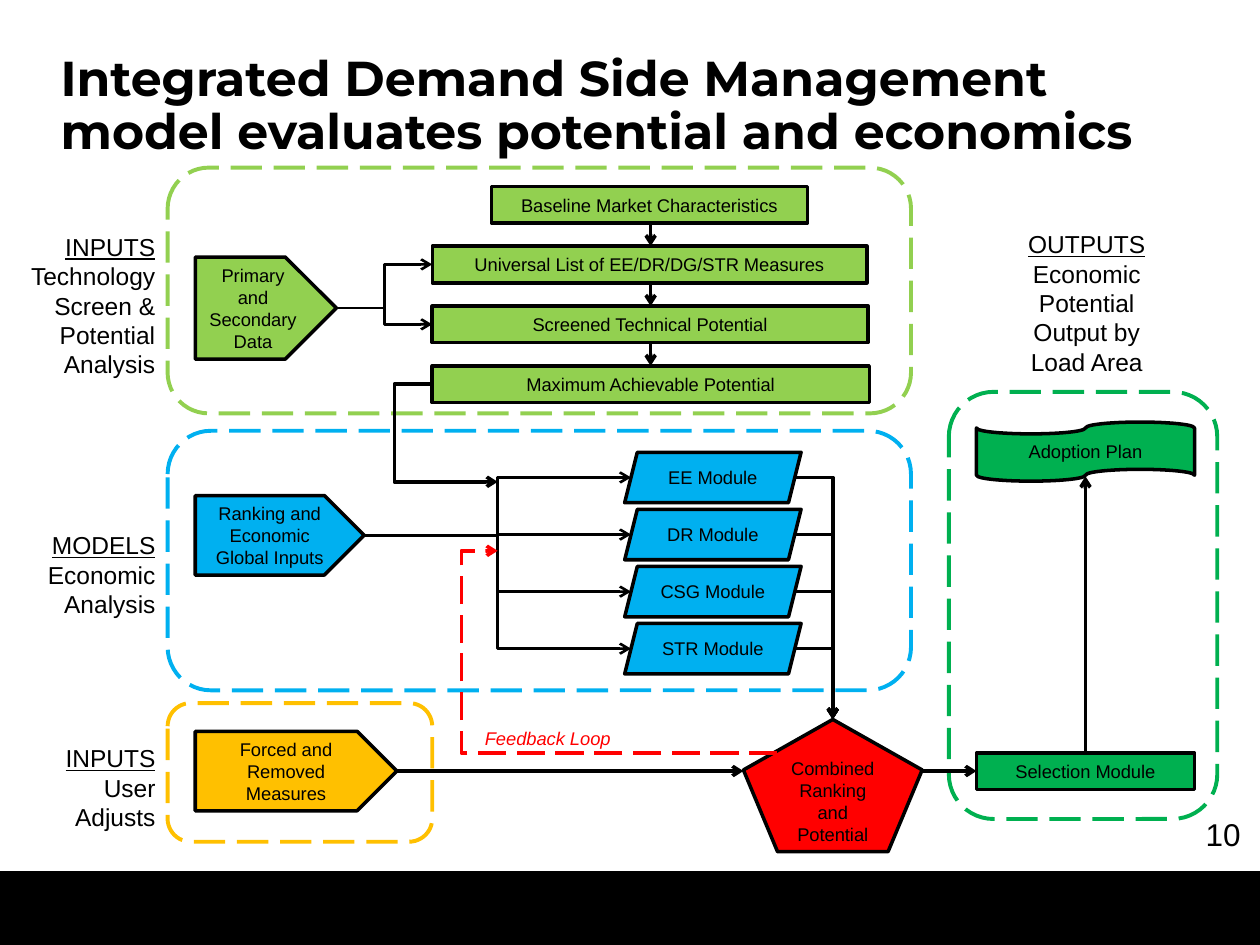
from dataclasses import dataclass
from typing import Optional

from lxml.etree import SubElement
from pptx import Presentation
from pptx.dml.color import RGBColor as RGB
from pptx.enum.dml import MSO_LINE as Dash
from pptx.enum.shapes import MSO_CONNECTOR as Conn, MSO_SHAPE as Geo
from pptx.enum.text import MSO_ANCHOR as Anchor, PP_ALIGN as Align
from pptx.oxml.ns import qn
from pptx.util import Pt


@dataclass(frozen=True)
class Theme:
    black: RGB = RGB(0, 0, 0)
    lime: RGB = RGB(0x92, 0xD0, 0x50)
    blue: RGB = RGB(0, 0xB0, 0xF0)
    green: RGB = RGB(0, 0xB0, 0x50)
    amber: RGB = RGB(0xFF, 0xC0, 0)
    red: RGB = RGB(0xFF, 0, 0)
    font: str = "Arial"
    title_font: str = "Montserrat"
    title: float = 28
    page: float = 18
    label: float = 14
    node: float = 10.5


T = Theme()


@dataclass
class Node:
    text: str
    geo: Geo
    fill: RGB
    x: float
    y: float
    w: float
    h: float

    @property
    def left(self):
        return self.x, self.y + self.h / 2

    @property
    def right(self):
        return self.x + self.w, self.y + self.h / 2

    @property
    def top(self):
        return self.x + self.w / 2, self.y

    @property
    def bottom(self):
        return self.x + self.w / 2, self.y + self.h


@dataclass
class Frame:
    color: RGB
    x: float
    y: float
    w: float
    h: float


@dataclass
class Label:
    head: str
    body: str
    align: Align
    x: float
    y: float
    w: float
    h: float


@dataclass
class Link:
    start: tuple
    end: tuple
    geom: str = "straightConnector1"
    width: float = 2
    color: RGB = T.black
    adj: Optional[float] = None
    dash: Optional[Dash] = None


def add_run(p, text: str, size: float, color: RGB = T.black, font: str = T.font):
    r = p.add_run()
    r.text = text
    r.font.size, r.font.name = Pt(size), font
    r.font.color.rgb = color
    return r


def add_box(slide, x: float, y: float, w: float, h: float):
    tf = slide.shapes.add_textbox(Pt(x), Pt(y), Pt(w), Pt(h)).text_frame
    tf.word_wrap = True
    return tf


def draw_node(slide, n: Node) -> None:
    s = slide.shapes.add_shape(n.geo, Pt(n.x), Pt(n.y), Pt(n.w), Pt(n.h))
    s.shadow.inherit = False
    s.fill.solid()
    s.fill.fore_color.rgb = n.fill
    s.line.color.rgb = T.black
    s.line.width = Pt(2)
    tf = s.text_frame
    tf.word_wrap = True
    tf.vertical_anchor = Anchor.MIDDLE
    p = tf.paragraphs[0]
    p.alignment = Align.CENTER
    add_run(p, n.text, T.node)


def draw_frame(slide, f: Frame) -> None:
    s = slide.shapes.add_shape(Geo.ROUNDED_RECTANGLE, Pt(f.x), Pt(f.y), Pt(f.w), Pt(f.h))
    s.shadow.inherit = False
    s.fill.background()
    s.line.color.rgb = f.color
    s.line.width = Pt(2.25)
    s.line.dash_style = Dash.LONG_DASH


def draw_label(slide, b: Label) -> None:
    tf = add_box(slide, b.x, b.y, b.w, b.h)
    for p, text in ((tf.paragraphs[0], b.head), (tf.add_paragraph(), b.body)):
        p.alignment = b.align
        add_run(p, text, T.label).font.underline = text == b.head


def draw_link(slide, k: Link) -> None:
    s = slide.shapes.add_connector(Conn.STRAIGHT, *map(Pt, (*k.start, *k.end)))
    geom = s._element.spPr.find(qn("a:prstGeom"))
    geom.set("prst", k.geom)
    if k.adj is not None:
        SubElement(geom.find(qn("a:avLst")), qn("a:gd"), name="adj1", fmla=f"val {round(k.adj * 100000)}")
    s.line.color.rgb = k.color
    s.line.width = Pt(k.width)
    if k.dash:
        s.line.dash_style = k.dash
    SubElement(s.line._get_or_add_ln(), qn("a:tailEnd"), type="arrow")
    SubElement(s._element.spPr, qn("a:effectLst"))


def main() -> None:
    prs = Presentation()
    prs.slide_width, prs.slide_height = Pt(720), Pt(540)
    slide = prs.slides.add_slide(prs.slide_layouts[5])

    draw_node(slide, Node("", Geo.RECTANGLE, T.black, 0, 498.5, 720, 40.5))
    p = add_box(slide, 678, 462.2, 42, 35.3).paragraphs[0]
    p.alignment = Align.CENTER
    add_run(p, "10", T.page)

    title = slide.shapes.title
    title.left, title.top, title.width, title.height = map(Pt, (27.4, 27.4, 666, 85))
    tf = title.text_frame
    tf.word_wrap = True
    tf.vertical_anchor = Anchor.TOP
    p = tf.paragraphs[0]
    p.alignment, p.line_spacing = Align.LEFT, 0.9
    text = "Integrated Demand Side Management model evaluates potential and economics"
    add_run(p, text, T.title, font=T.title_font).font.bold = True

    step_data = [
        ("Baseline Market Characteristics", 280.8, 180.7),
        ("Universal List of EE/DR/DG/STR Measures", 247, 248.4),
        ("Screened Technical Potential", 247, 249.1),
        ("Maximum Achievable Potential", 247, 249.8),
    ]
    steps = [Node(t, Geo.RECTANGLE, T.lime, x, 106.5 + 34.2 * i, w, 20.9)
             for i, (t, x, w) in enumerate(step_data)]
    modules = [Node(f"{t} Module", Geo.PARALLELOGRAM, T.blue, 357, 258.5 + 32.6 * i, 100.8, 28.8)
               for i, t in enumerate(("EE", "DR", "CSG", "STR"))]
    combined = Node("Combined Ranking and Potential", Geo.REGULAR_PENTAGON, T.red, 424.8, 411.1, 102.2, 75.6)
    selection = Node("Selection Module", Geo.RECTANGLE, T.green, 558, 430.2, 124.6, 20.9)
    adoption = Node("Adoption Plan", Geo.FLOWCHART_PUNCHED_TAPE, T.green, 558, 241.2, 124.6, 33.8)
    data = Node("Primary and Secondary Data", Geo.PENTAGON, T.lime, 111.6, 146.9, 80.6, 58.3)
    ranking = Node("Ranking and Economic Global Inputs", Geo.PENTAGON, T.blue, 111.6, 283.2, 96.5, 45.4)
    forced = Node("Forced and Removed Measures", Geo.PENTAGON, T.amber, 111.6, 417.9, 115.2, 45.4)
    for n in (*steps, *modules, combined, selection, adoption, data, ranking, forced):
        draw_node(slide, n)

    for f in (
        Frame(T.lime, 95.8, 95.8, 424.8, 140.4),
        Frame(T.blue, 95.8, 246.2, 424.8, 148.3),
        Frame(T.amber, 95.8, 401.8, 151.2, 79.2),
        Frame(T.green, 542.2, 223.9, 153.4, 244.1),
    ):
        draw_frame(slide, f)

    slant = 3.6
    bus_x = 284.4
    row_y = forced.right[1]
    links = [Link((371.8, a.bottom[1]), (371.8, b.y)) for a, b in zip(steps, steps[1:])]
    links += [Link(data.right, n.left, "bentConnector3", 1.5) for n in steps[1:3]]
    for n in modules:
        links += [
            Link(ranking.right, (n.x + slant, n.left[1]), "bentConnector3", 1.5),
            Link((n.right[0] - slant, n.right[1]), combined.top, "bentConnector2"),
        ]
    links += [
        Link(forced.right, (combined.x, row_y)),
        Link((combined.right[0], row_y), (selection.x, row_y)),
        Link(selection.top, (selection.top[0], 272.2)),
        Link(steps[3].left, (bus_x, 275.4), "bentConnector3", adj=-0.58),
        Link((444.2, 430.3), (bus_x, 314.8), "bentConnector3", color=T.red, adj=1.13, dash=Dash.LONG_DASH),
    ]
    for k in links:
        draw_link(slide, k)

    p = add_box(slide, 270, 411.8, 119.5, 20.2).paragraphs[0]
    add_run(p, "Feedback Loop", T.node, T.red).font.italic = True
    for b in (
        Label("INPUTS", "Technology Screen & Potential Analysis", Align.RIGHT, 5.8, 128.9, 90, 92.2),
        Label("MODELS", "Economic Analysis", Align.RIGHT, 12, 299.5, 84, 58.3),
        Label("INPUTS", "User Adjusts", Align.RIGHT, 12, 421.2, 84, 58.3),
        Label("OUTPUTS", "Economic Potential Output by Load Area", Align.CENTER, 576, 127.4, 90, 92.2),
    ):
        draw_label(slide, b)

    prs.save("out.pptx")


if __name__ == "__main__":
    main()
